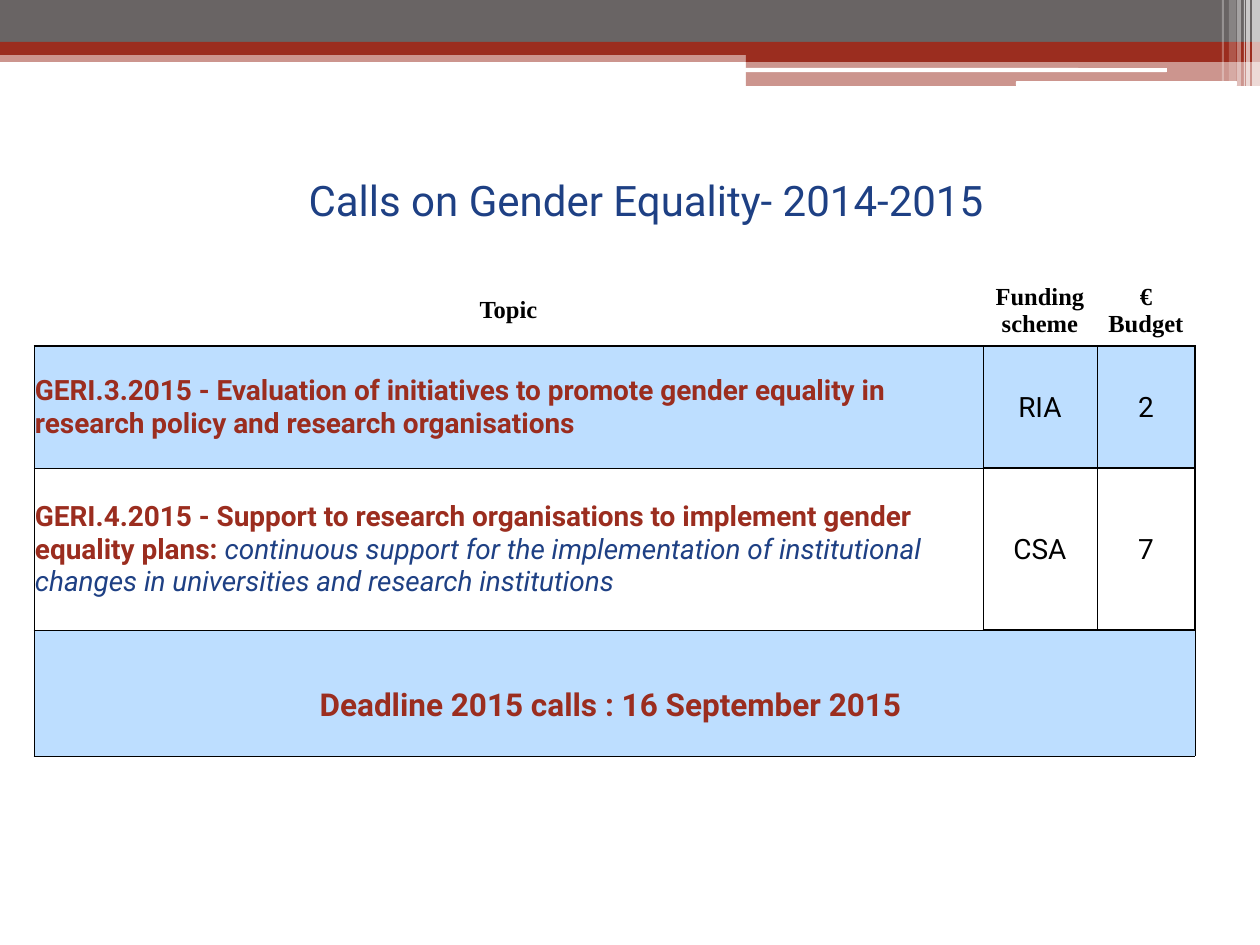
import copy
import pptx
import pptx.dml.color
import pptx.enum.shapes
import pptx.enum.text
import pptx.oxml
import pptx.oxml.ns
import pptx.util

SCALE = 914400 / 126
ALIGN = pptx.enum.text.PP_ALIGN
ANCHOR = pptx.enum.text.MSO_ANCHOR
FORM = pptx.enum.shapes.MSO_SHAPE


class Theme:
    grey, red, blue = "696464", "9B2D1F", "1E4084"
    sky, white, black = "BDDEFF", "FFFFFF", "000000"
    sans, serif = "Roboto", "Times New Roman"
    title = {"name": sans, "size": 24, "bold": False}, blue
    head = {"name": serif, "size": 14, "bold": True}, black
    topic = {"name": sans, "size": 16, "bold": True}, red
    note = {"name": sans, "size": 16, "bold": False, "italic": True}, blue
    value = {"name": sans, "size": 16, "bold": False}, black
    closing = {"name": sans, "size": 18, "bold": True}, red


def px(count):
    return pptx.util.Emu(round(count * SCALE))


def tint(code):
    return pptx.dml.color.RGBColor.from_string(code)


def apply(item, values):
    for name, value in values.items():
        setattr(item, name, value)


def place(item, box):
    apply(item, dict(zip(("left", "top", "width", "height"), map(px, box))))


def style(font, look):
    values, ink = look
    apply(font, {**values, "size": pptx.util.Pt(values["size"])})
    font.color.rgb = tint(ink)


def write(para, parts, align):
    para.alignment = align
    for words, look in parts:
        for index, line in enumerate(words.split("\n")):
            if index:
                para.add_line_break()
                para._p[-1].append(copy.deepcopy(run._r.rPr))
            run = para.add_run()
            run.text = line
            style(run.font, look)


def bar(slide, box, ink, alpha=100, form=FORM.RECTANGLE):
    shape = slide.shapes.add_shape(form, *map(px, box))
    shape.shadow.inherit = False
    shape.fill.solid()
    shape.fill.fore_color.rgb = tint(ink)
    shape.line.fill.background()
    if alpha < 100:
        color = shape.fill._xPr.find(".//" + pptx.oxml.ns.qn("a:srgbClr"))
        color.append(pptx.oxml.parse_xml(
            f'<a:alpha {pptx.oxml.ns.nsdecls("a")} val="{alpha * 1000}"/>'))
    return shape


def banner(slide, box):
    left, top, width, height = box
    right, step = left + width, 514
    for x, y, wide, high, ink, alpha in (
        (0, 50, width, 12, Theme.red, 50),
        (0, 0, width, 43, Theme.grey, 100),
        (0, 42, width, 13, Theme.red, 100),
        (width - step, 49, step, 13, Theme.red, 100),
        (width - step, 61, step, 25, Theme.red, 50),
    ):
        bar(slide, (left + x, top + y, wide, high), ink, alpha)
    for back, y, wide, high in ((515, 68, 422, 4), (244, 81, 221, 5)):
        pill = bar(slide, (right - back, top + y, wide, high),
                   Theme.white, form=FORM.ROUNDED_RECTANGLE)
        pill.adjustments[0] = 0.17
    for back, wide, high, alpha in (
        (8, 8, height, 65), (14, 4, height, 65), (16, 1, height, 60),
        (23, 4, height, 40), (31, 7, height - 5, 20), (38, 2, height - 5, 30),
    ):
        bar(slide, (right - back, top, wide, high), Theme.white, alpha)


def heading(slide, box):
    title = slide.shapes.title
    place(title, box)
    frame = title.text_frame
    apply(frame, {"vertical_anchor": ANCHOR.MIDDLE, "word_wrap": True,
                  "auto_size": pptx.enum.text.MSO_AUTO_SIZE.NONE})
    write(frame.paragraphs[0],
          [("Calls on Gender Equality- 2014-2015", Theme.title)], ALIGN.CENTER)


def border(cell, sides):
    props = cell._tc.get_or_add_tcPr()
    for side in "LRTB":
        points = sides.get(side, 0)
        paint = (f'<a:solidFill><a:srgbClr val="{Theme.black}"/></a:solidFill>'
                 if points else "<a:noFill/>")
        props.append(pptx.oxml.parse_xml(
            f'<a:ln{side} {pptx.oxml.ns.nsdecls("a")} '
            f'w="{int(points * 12700)}">{paint}</a:ln{side}>'))


def edges(row, col):
    if row == 0:
        return {"B": 1}
    if row == 3:
        return dict.fromkeys("LRTB", 0.5)
    return {"L": 0.5, "R": 1 if col == 2 else 0.5,
            "T": 1 if row == 1 else 0.5, "B": 1 if col else 0.5}


def calls(slide, box):
    rows = (
        [[("Topic", Theme.head)], [("Funding scheme", Theme.head)],
         [("€\nBudget", Theme.head)]],
        [[("GERI.3.2015 - Evaluation of initiatives to promote gender equality "
           "in research policy and research organisations", Theme.topic)],
         [("RIA", Theme.value)], [("2", Theme.value)]],
        [[("GERI.4.2015 - Support to research organisations to implement "
           "gender equality plans: ", Theme.topic),
          ("continuous support for the implementation of institutional "
           "changes in universities and research institutions", Theme.note)],
         [("CSA", Theme.value)], [("7", Theme.value)]],
        [[("Deadline 2015 calls : 16 September 2015 ", Theme.closing)], [], []],
    )
    table = slide.shapes.add_table(4, 3, *map(px, box)).table
    apply(table, {"first_row": False, "horz_banding": False})
    for col, width in zip(table.columns, (949, 114, 98)):
        col.width = px(width)
    for row, height in zip(table.rows, (72, 122, 162, 126)):
        row.height = px(height)
    for i, row in enumerate(rows):
        for j, parts in enumerate(row):
            cell = table.cell(i, j)
            apply(cell, {"margin_left": px(1), "margin_right": px(1),
                         "margin_top": px(26 if i == 3 else 1),
                         "margin_bottom": 0, "vertical_anchor": ANCHOR.MIDDLE})
            border(cell, edges(i, j))
            cell.fill.solid()
            cell.fill.fore_color.rgb = tint(Theme.sky if i % 2 else Theme.white)
            topic = j == 0 and i in (1, 2)
            write(cell.text_frame.paragraphs[0], parts,
                  ALIGN.LEFT if topic else ALIGN.CENTER)
    table.cell(3, 0).merge(table.cell(3, 2))


def main():
    deck = pptx.Presentation()
    apply(deck, {"slide_width": px(1260), "slide_height": px(945)})
    slide = deck.slides.add_slide(deck.slide_layouts[5])
    banner(slide, (0, 0, 1260, 86))
    heading(slide, (94, 155, 1104, 90))
    calls(slide, (34, 274, 1161, 482))
    deck.save("out.pptx")


if __name__ == "__main__":
    main()
